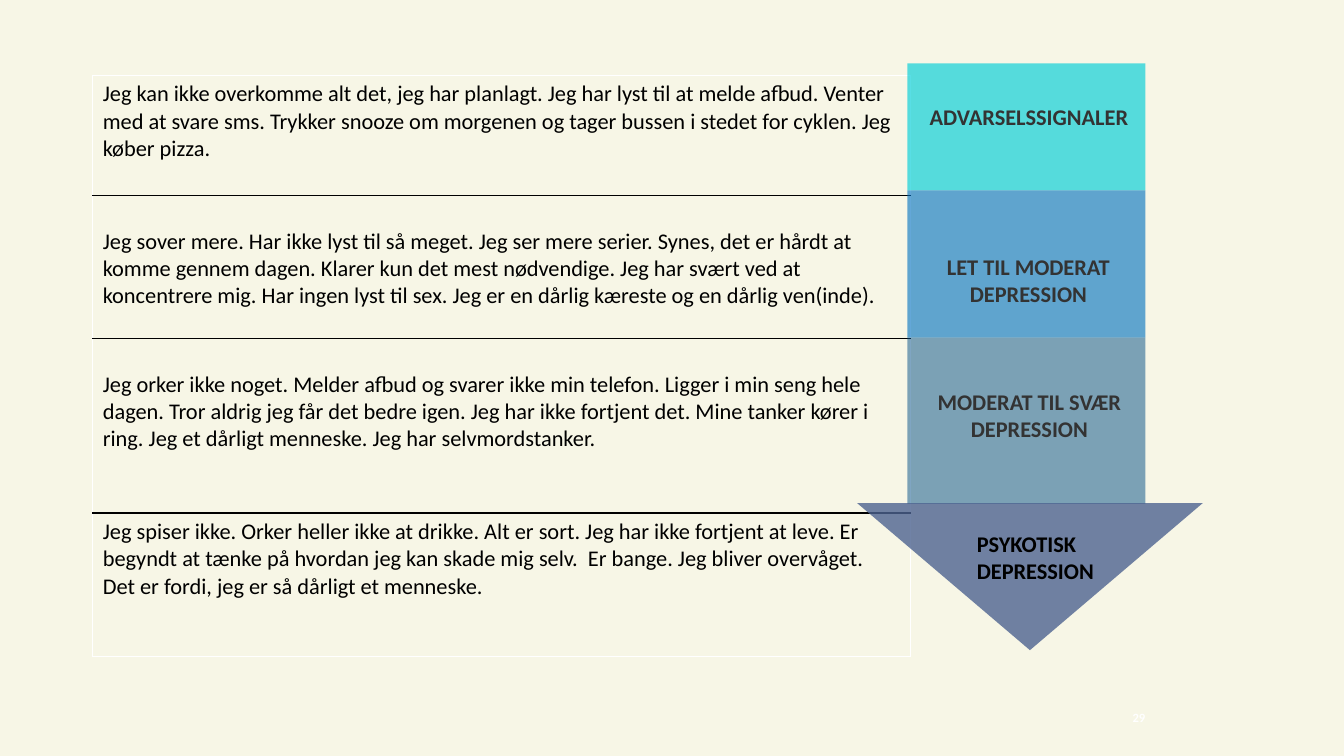
import pptx
import pptx.util
import pptx.dml.color
import pptx.enum.shapes
import pptx.enum.text
import pptx.oxml
import pptx.oxml.ns
from lxml import etree

Inches = pptx.util.Inches
KINDS = pptx.enum.shapes.MSO_SHAPE
ALIGN = pptx.enum.text.PP_ALIGN

COLORS = {
    "paper": "F7F6E6", "black": "000000", "white": "FFFFFF", "grey": "333333",
    "teal": "02CED8", "blue": "0070C0", "navy": "004D86", "slate": "4D6390",
}
ROWS = [
    (1.19, 0.05, "Jeg kan ikke overkomme alt det, jeg har planlagt. Jeg har lyst til at melde afbud. "
     "Venter med at svare sms. Trykker snooze om morgenen og tager bussen i stedet for cyklen. "
     "Jeg køber pizza."),
    (1.42, 0.32, "Jeg sover mere. Har ikke lyst til så meget. Jeg ser mere serier. Synes, det er hårdt at "
     "komme gennem dagen. Klarer kun det mest nødvendige. Jeg har svært ved at koncentrere mig. "
     "Har ingen lyst til sex. Jeg er en dårlig kæreste og en dårlig ven(inde)."),
    (1.73, 0.32, "Jeg orker ikke noget. Melder afbud og svarer ikke min telefon. Ligger i min seng hele "
     "dagen. Tror aldrig jeg får det bedre igen. Jeg har ikke fortjent det. Mine tanker kører i "
     "ring. Jeg et dårligt menneske. Jeg har selvmordstanker."),
    (1.42, 0.05, "Jeg spiser ikke. Orker heller ikke at drikke. Alt er sort. Jeg har ikke fortjent at "
     "leve. Er begyndt at tænke på hvordan jeg kan skade mig selv.  Er bange. Jeg bliver "
     "overvåget. Det er fordi, jeg er så dårligt et menneske."),
]
STAGES = [
    ("teal", 66, 1.26, "ADVARSELSSIGNALER", (9.15, 1.02, 2.11, 0.96)),
    ("blue", 61, 1.46, "LET TIL MODERAT DEPRESSION", (9.13, 2.51, 2.14, 1.39)),
    ("navy", 50, 1.65, "MODERAT TIL SVÆR DEPRESSION", (9.03, 3.85, 2.36, 0.69)),
]
STAGE_X, STAGE_Y, STAGE_W = 9, 0.63, 2.36
TIP = (8.5, 4.99, 3.43, 1.46)
TABLE = (0.92, 0.75, 8.11)


def rgb(name):
    return pptx.dml.color.RGBColor.from_string(COLORS[name])


def write(frame, text, size=16, color="black", bold=False, align=ALIGN.LEFT, font="Calibri"):
    frame.word_wrap = True
    for i, line in enumerate(text.split("\n")):
        para = frame.add_paragraph() if i else frame.paragraphs[0]
        para.alignment = align
        run = para.add_run()
        run.text = line
        run.font.name = font
        run.font.size = pptx.util.Pt(size)
        run.font.bold = bold
        run.font.color.rgb = rgb(color)


def label(slide, box, text, pad=0, **style):
    frame = slide.shapes.add_textbox(*map(Inches, box)).text_frame
    frame.margin_left = frame.margin_right = Inches(pad)
    frame.margin_top = frame.margin_bottom = Inches(pad / 2)
    write(frame, text, **style)


def block(slide, kind, box, color, alpha):
    shape = slide.shapes.add_shape(kind, *map(Inches, box))
    shape.shadow.inherit = False
    shape.line.fill.background()
    shape.fill.solid()
    shape.fill.fore_color.rgb = rgb(color)
    tint = shape.fill._xPr.find(".//" + pptx.oxml.ns.qn("a:srgbClr"))
    etree.SubElement(tint, pptx.oxml.ns.qn("a:alpha"), val=str(alpha * 1000))
    return shape


def border(cell, side, color):
    props = cell._tc.get_or_add_tcPr()
    props.append(pptx.oxml.parse_xml(
        f'<a:ln{side} {pptx.oxml.ns.nsdecls("a")} w="12700"><a:solidFill>'
        f'<a:srgbClr val="{COLORS[color]}"/></a:solidFill></a:ln{side}>'))


def quotes(slide):
    x, y, width = TABLE
    height = sum(row[0] for row in ROWS)
    grid = slide.shapes.add_table(len(ROWS), 1, *map(Inches, (x, y, width, height))).table
    grid.first_row = grid.horz_banding = False
    for i, (tall, top, text) in enumerate(ROWS):
        grid.rows[i].height = Inches(tall)
        cell = grid.cell(i, 0)
        cell.margin_top = Inches(top)
        edges = {
            "L": "white", "R": "white",
            "T": "black" if i else "white",
            "B": "black" if i < len(ROWS) - 1 else "white",
        }
        for side, color in edges.items():
            border(cell, side, color)
        cell.fill.background()
        write(cell.text_frame, text)


def arrow(slide):
    top = STAGE_Y
    for color, alpha, tall, text, box in STAGES:
        block(slide, KINDS.RECTANGLE, (STAGE_X, top, STAGE_W, tall), color, alpha)
        label(slide, box, text, color="grey", bold=True, align=ALIGN.CENTER)
        top += tall
    block(slide, KINDS.ISOSCELES_TRIANGLE, TIP, "slate", 80).rotation = 180
    label(slide, (9.59, 5.21, 1.8, 0.64), "PSYKOTISK\nDEPRESSION", pad=0.1, bold=True)


def main():
    """Build the slide on the stages of depression."""
    deck = pptx.Presentation()
    deck.slide_width, deck.slide_height = Inches(13.33), Inches(7.5)
    slide = deck.slides.add_slide(deck.slide_layouts[6])
    slide.background.fill.solid()
    slide.background.fill.fore_color.rgb = rgb("paper")
    quotes(slide)
    arrow(slide)
    label(slide, (10.86, 7.04, 0.5, 0.2), "29", size=9, color="white", bold=True,
          align=ALIGN.RIGHT)
    deck.save("out.pptx")


if __name__ == "__main__":
    main()
